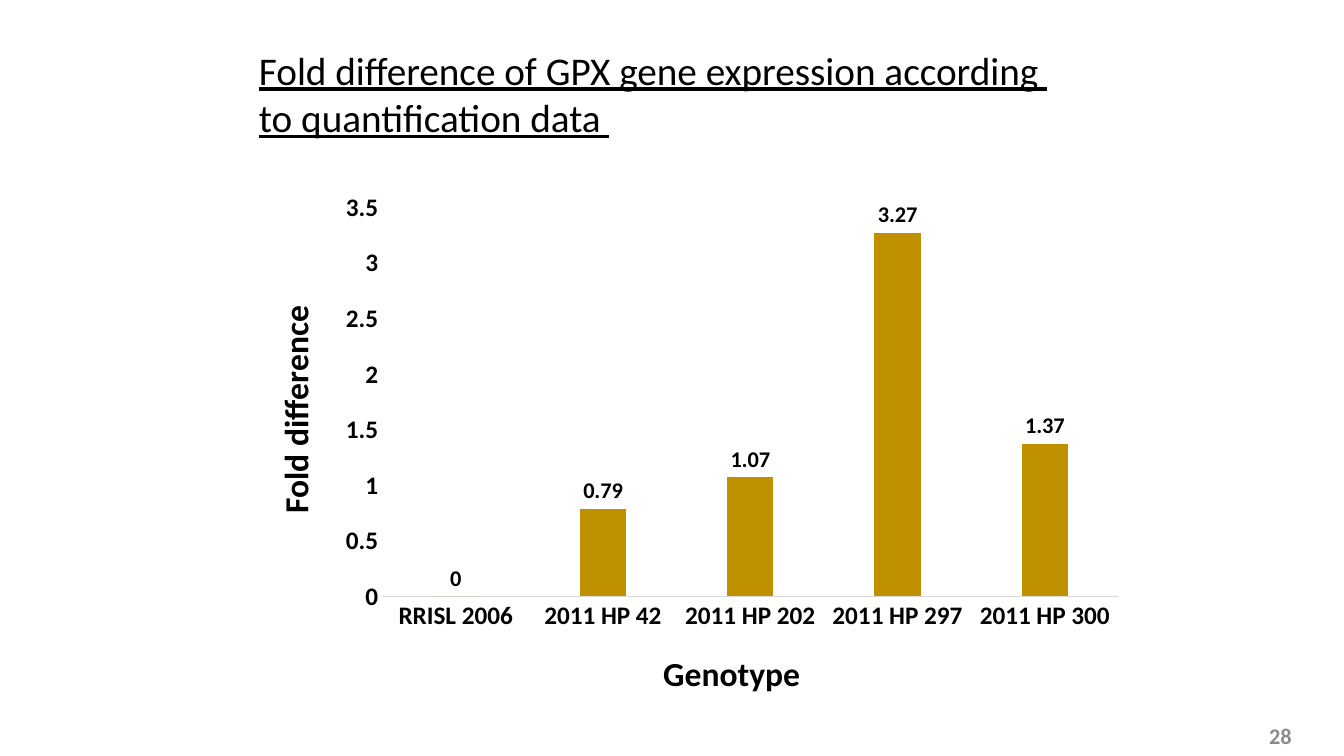
import pptx
import pptx.util
import pptx.chart.data
import pptx.dml.color
import pptx.enum.chart
import pptx.enum.text
import pptx.oxml

Inches, Pt = pptx.util.Inches, pptx.util.Pt
RGB = pptx.dml.color.RGBColor
enum = pptx.enum.chart

# Content
TITLE = ["Fold difference of GPX gene expression according ",
         "to quantification data "]
NUMBER = "28"
DATA = {"RRISL 2006": 0, "2011 HP 42": 0.79, "2011 HP 202": 1.07,
        "2011 HP 297": 3.27, "2011 HP 300": 1.37}
SERIES = "Series 1"
CAT_NAME, VAL_NAME = "Genotype", "Fold difference"

# Look
FACE = "Calibri"
BLACK = RGB(0x00, 0x00, 0x00)
GREY = RGB(0x8C, 0x8C, 0x8C)
LIGHT = RGB(0xD9, 0xD9, 0xD9)
GOLD = RGB(0xBF, 0x90, 0x00)

# Places inside the chart, as shares of its size
PLOT = {"x": 0.15, "y": 0.05, "w": 0.83, "h": 0.72}
CAT_AT = {"x": 0.46, "y": 0.86}
VAL_AT = {"x": 0.02, "y": 0.22}


def style(font, size, color=BLACK, bold=True):
    font.name, font.size, font.bold = FACE, Pt(size), bold
    font.color.rgb = color


def layout(share, inner=False):
    target = '<c:layoutTarget val="inner"/>' if inner else ""
    modes = "".join(f'<c:{k}Mode val="edge"/>' for k in "xy")
    sizes = "".join(f'<c:{k} val="{v}"/>' for k, v in share.items())
    return pptx.oxml.parse_xml(
        '<c:layout xmlns:c="http://schemas.openxmlformats.org/'
        'drawingml/2006/chart"><c:manualLayout>'
        f'{target}{modes}{sizes}</c:manualLayout></c:layout>')


def place(node, share, inner=False):
    for old in node.findall(pptx.oxml.ns.qn("c:layout")):
        node.remove(old)
    text = node.find(pptx.oxml.ns.qn("c:tx"))
    spot = 0 if text is None else node.index(text) + 1
    node.insert(spot, layout(share, inner))


def add_text(slide, box, lines, size, color, bold, wrap):
    frame = slide.shapes.add_textbox(*map(Inches, box)).text_frame
    frame.word_wrap = wrap
    frame.text = "\n".join(lines)
    for para in frame.paragraphs:
        style(para.font, size, color, bold)
    return frame


def set_axis(axis, name, share):
    axis.has_major_gridlines = False
    axis.major_tick_mark = axis.minor_tick_mark = enum.XL_TICK_MARK.NONE
    style(axis.tick_labels.font, 18)
    frame = axis.axis_title.text_frame
    frame.text = name
    style(frame.paragraphs[0].font, 24)
    place(axis.axis_title._element, share)


def add_bars(slide):
    data = pptx.chart.data.CategoryChartData()
    data.categories = list(DATA)
    data.add_series(SERIES, list(DATA.values()))
    box = map(Inches, (2.47, 1.79, 8.8, 5.36))
    chart = slide.shapes.add_chart(
        enum.XL_CHART_TYPE.COLUMN_CLUSTERED, *box, data).chart
    chart.has_title = chart.has_legend = False
    chart.font.name, chart.font.size = "Times New Roman", Pt(10.5)
    chart.font.color.rgb = BLACK
    place(chart._chartSpace.chart.plotArea, PLOT, True)

    # Axes
    cat, val = chart.category_axis, chart.value_axis
    set_axis(cat, CAT_NAME, CAT_AT)
    set_axis(val, VAL_NAME, VAL_AT)
    cat.format.line.color.rgb = LIGHT
    cat.format.line.width = Pt(0.75)
    val.format.line.fill.background()
    val.minimum_scale, val.maximum_scale, val.major_unit = 0, 3.5, 0.5

    # Bars and labels
    plot = chart.plots[0]
    plot.gap_width, plot.overlap = 219, -27
    plot.vary_by_categories = False
    bars = plot.series[0]
    bars.format.fill.solid()
    bars.format.fill.fore_color.rgb = GOLD
    labels = bars.data_labels
    labels.show_value = True
    labels.position = enum.XL_LABEL_POSITION.OUTSIDE_END
    style(labels.font, 16)


def main():
    deck = pptx.Presentation()
    deck.slide_width, deck.slide_height = Inches(13.33), Inches(7.5)
    slide = deck.slides.add_slide(deck.slide_layouts[6])

    # Page number
    page = add_text(slide, (9.91, 7.1, 3, 0.4), [NUMBER], 16, GREY, True, True)
    page.vertical_anchor = pptx.enum.text.MSO_ANCHOR.MIDDLE
    page.paragraphs[0].alignment = pptx.enum.text.PP_ALIGN.RIGHT

    # Heading
    head = add_text(slide, (2.47, 0.41, 8.11, 1.04), TITLE, 28, BLACK,
                    False, False)
    head.auto_size = pptx.enum.text.MSO_AUTO_SIZE.SHAPE_TO_FIT_TEXT
    for para in head.paragraphs:
        para.font.underline = True

    add_bars(slide)
    deck.save("out.pptx")


if __name__ == "__main__":
    main()
